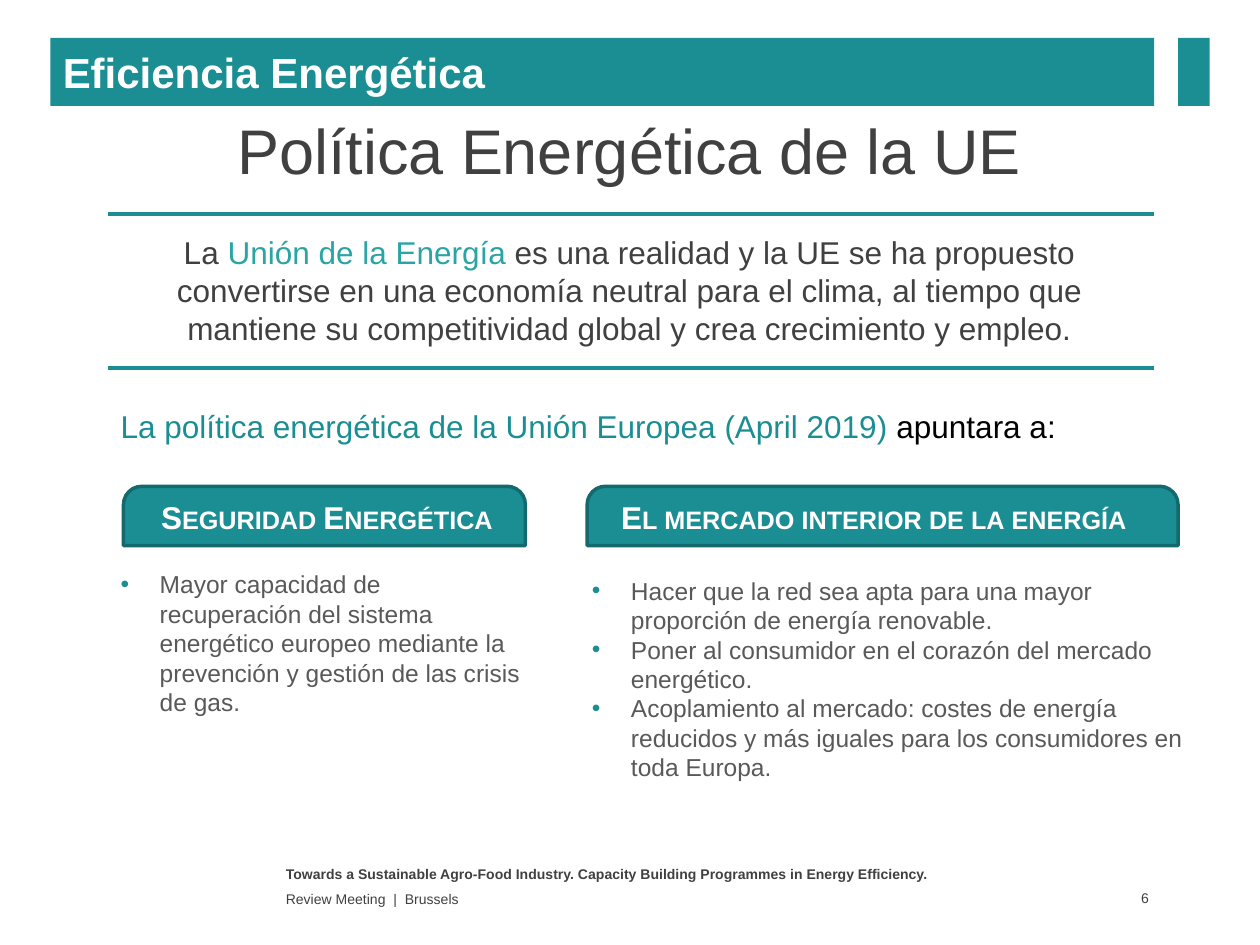
from dataclasses import dataclass

from lxml.etree import SubElement
from pptx import Presentation
from pptx.dml.color import RGBColor
from pptx.enum.shapes import MSO_CONNECTOR, MSO_SHAPE
from pptx.enum.text import MSO_ANCHOR, MSO_AUTO_SIZE, PP_ALIGN
from pptx.oxml.ns import qn
from pptx.util import Inches, Pt


@dataclass(frozen=True)
class Theme:
    font: str = "Arial"
    teal: str = "1B8E94"
    bright_teal: str = "2AA4A4"
    dark_teal: str = "14696E"
    dark: str = "404040"
    grey: str = "595959"
    black: str = "000000"
    white: str = "FFFFFF"
    title: int = 36
    banner: int = 24
    lead: int = 18
    body: int = 14
    footer: int = 8
    rule: float = 2.25
    outline: float = 2


class SlideBuilder:
    """Places elements on a grid of 100 columns by 75 rows."""

    def __init__(self, presentation, theme):
        self.theme = theme
        self.column = presentation.slide_width / 100
        self.row = presentation.slide_height / 75
        layout = presentation.slide_layouts.get_by_name("Title Only")
        self.slide = presentation.slides.add_slide(layout)

    def place(self, left, top, width, height):
        return (round(left * self.column), round(top * self.row),
                round(width * self.column), round(height * self.row))

    def fill_text(self, shape, paragraphs, size, color, bold=False,
                  align=PP_ALIGN.LEFT, anchor=MSO_ANCHOR.TOP,
                  bullets=False, small_caps=False):
        """Fill a shape; a paragraph is a list of (text, colour or None) runs."""
        frame = shape.text_frame
        frame.word_wrap = True
        frame.auto_size = MSO_AUTO_SIZE.NONE
        frame.vertical_anchor = anchor
        for index, runs in enumerate(paragraphs):
            paragraph = frame.add_paragraph() if index else frame.paragraphs[0]
            paragraph.alignment = align
            if bullets:
                self.add_bullet(paragraph)
            font = paragraph.font
            font.name, font.size, font.bold = self.theme.font, Pt(size), bold
            font.color.rgb = RGBColor.from_string(color)
            for text, run_color in runs:
                run = paragraph.add_run()
                run.text = text
                if run_color:
                    run.font.color.rgb = RGBColor.from_string(run_color)
                if small_caps:
                    run._r.get_or_add_rPr().set("cap", "small")

    def add_bullet(self, paragraph):
        properties = paragraph._p.get_or_add_pPr()
        indent = Inches(0.31)
        properties.set("marL", str(indent))
        properties.set("indent", str(-indent))
        bullet_color = SubElement(properties, qn("a:buClr"))
        SubElement(bullet_color, qn("a:srgbClr"), val=self.theme.teal)
        SubElement(properties, qn("a:buFont"), typeface=self.theme.font)
        SubElement(properties, qn("a:buChar"), char="•")

    def title(self, box, text):
        shape = self.slide.shapes.title
        shape.left, shape.top, shape.width, shape.height = self.place(*box)
        self.fill_text(shape, [[(text, None)]], self.theme.title, self.theme.dark,
                       align=PP_ALIGN.CENTER, anchor=MSO_ANCHOR.MIDDLE)

    def text(self, box, paragraphs, size, color, **style):
        shape = self.slide.shapes.add_textbox(*self.place(*box))
        self.fill_text(shape, paragraphs, size, color, **style)
        return shape

    def block(self, box, kind=MSO_SHAPE.RECTANGLE, outline=None):
        shape = self.slide.shapes.add_shape(kind, *self.place(*box))
        shape.shadow.inherit = False
        shape.fill.solid()
        shape.fill.fore_color.rgb = RGBColor.from_string(self.theme.teal)
        if outline:
            shape.line.color.rgb = RGBColor.from_string(outline)
            shape.line.width = Pt(self.theme.outline)
        else:
            shape.line.fill.background()
        return shape

    def rule(self, left, right, top):
        x, y, length, _ = self.place(left, top, right - left, 0)
        line = self.slide.shapes.add_connector(
            MSO_CONNECTOR.STRAIGHT, x, y, x + length, y)
        line.line.color.rgb = RGBColor.from_string(self.theme.teal)
        line.line.width = Pt(self.theme.rule)
        SubElement(line._element.spPr, qn("a:effectLst"))

    def topic(self, tab, label, heading, body, points):
        """Add a rounded tab with its heading and the bullets below it."""
        theme = self.theme
        shape = self.block(tab, MSO_SHAPE.ROUND_2_SAME_RECTANGLE, theme.dark_teal)
        shape.adjustments[0] = 0.31
        self.text(label, [[(heading, None)]], theme.lead, theme.white, bold=True,
                  align=PP_ALIGN.CENTER, small_caps=True)
        self.text(body, [[(point, None)] for point in points],
                  theme.body, theme.grey, bullets=True)


def main():
    presentation = Presentation()
    presentation.slide_width, presentation.slide_height = Inches(10), Inches(7.5)
    theme = Theme()
    builder = SlideBuilder(presentation, theme)

    builder.title((4, 10.3, 91.9, 3.1), "Política Energética de la UE")
    banner = builder.block((4, 3, 87.6, 5.4))
    builder.fill_text(banner, [[("Eficiencia Energética", None)]], theme.banner,
                      theme.white, bold=True, anchor=MSO_ANCHOR.MIDDLE)
    builder.block((93.5, 3, 2.5, 5.4))

    for top in (17, 29.2):
        builder.rule(8.6, 91.6, top)
    builder.text((9, 18, 81.9, 10.1), [[
        ("La ", None),
        ("Unión de la Energía ", theme.bright_teal),
        ("es una realidad y la UE se ha propuesto convertirse en una economía "
         "neutral para el clima, al tiempo que mantiene su competitividad global "
         "y crea crecimiento y empleo.", None),
    ]], theme.lead, theme.dark, align=PP_ALIGN.CENTER)
    builder.text((8.6, 31.8, 83.6, 4), [[
        ("La política energética de la Unión Europea (April 2019) ", None),
        ("apuntara a:", theme.black),
    ]], theme.lead, theme.teal)

    builder.topic(
        (9.8, 38.6, 31.9, 4.7), (11, 39, 29.9, 4), "Seguridad Energética",
        (8.6, 44.7, 34, 12.8),
        ["Mayor capacidad de recuperación del sistema energético europeo "
         "mediante la prevención y gestión de las crisis de gas."])
    builder.topic(
        (46.6, 38.6, 46.9, 4.7), (46.6, 39, 45.5, 4),
        "El mercado interior de la energía",
        (46, 45.2, 50, 17.5),
        ["Hacer que la red sea apta para una mayor proporción de energía renovable.",
         "Poner al consumidor en el corazón del mercado energético.",
         "Acoplamiento al mercado: costes de energía reducidos y más iguales "
         "para los consumidores en toda Europa."])

    builder.text((21.7, 68.2, 55, 2.1), [[
        ("Towards a Sustainable Agro-Food Industry. Capacity Building Programmes "
         "in Energy Efficiency.", None)]], theme.footer, theme.dark, bold=True)
    builder.text((21.7, 70.4, 55, 1.9), [[("Review Meeting  |  Brussels", None)]],
                 theme.footer, theme.dark, anchor=MSO_ANCHOR.MIDDLE)
    number = builder.text((86, 70.3, 5.6, 2), [[("6", None)]], theme.footer,
                          theme.dark, align=PP_ALIGN.RIGHT,
                          anchor=MSO_ANCHOR.MIDDLE)
    number.text_frame.margin_right = Inches(0.04)

    presentation.save("out.pptx")


if __name__ == "__main__":
    main()
